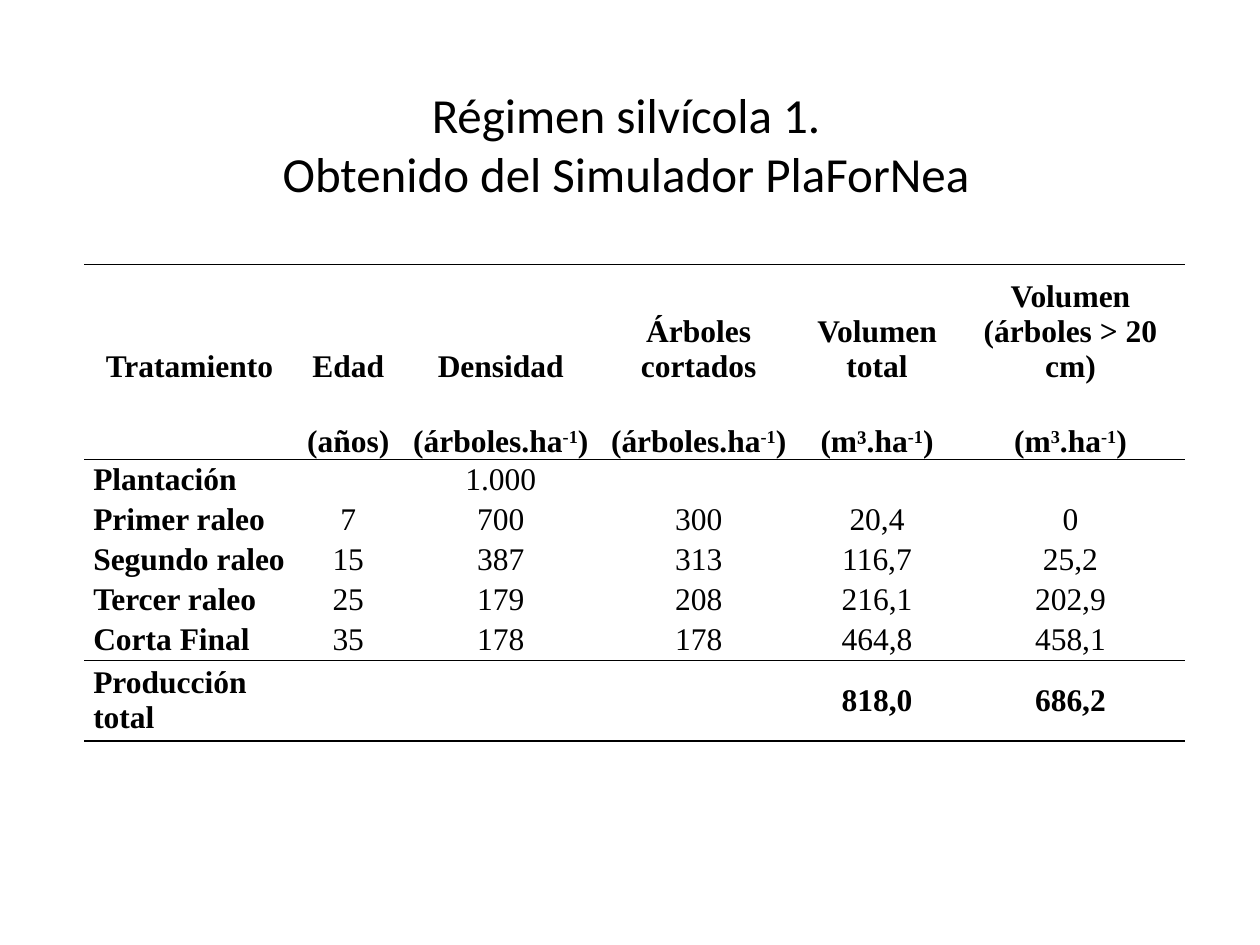
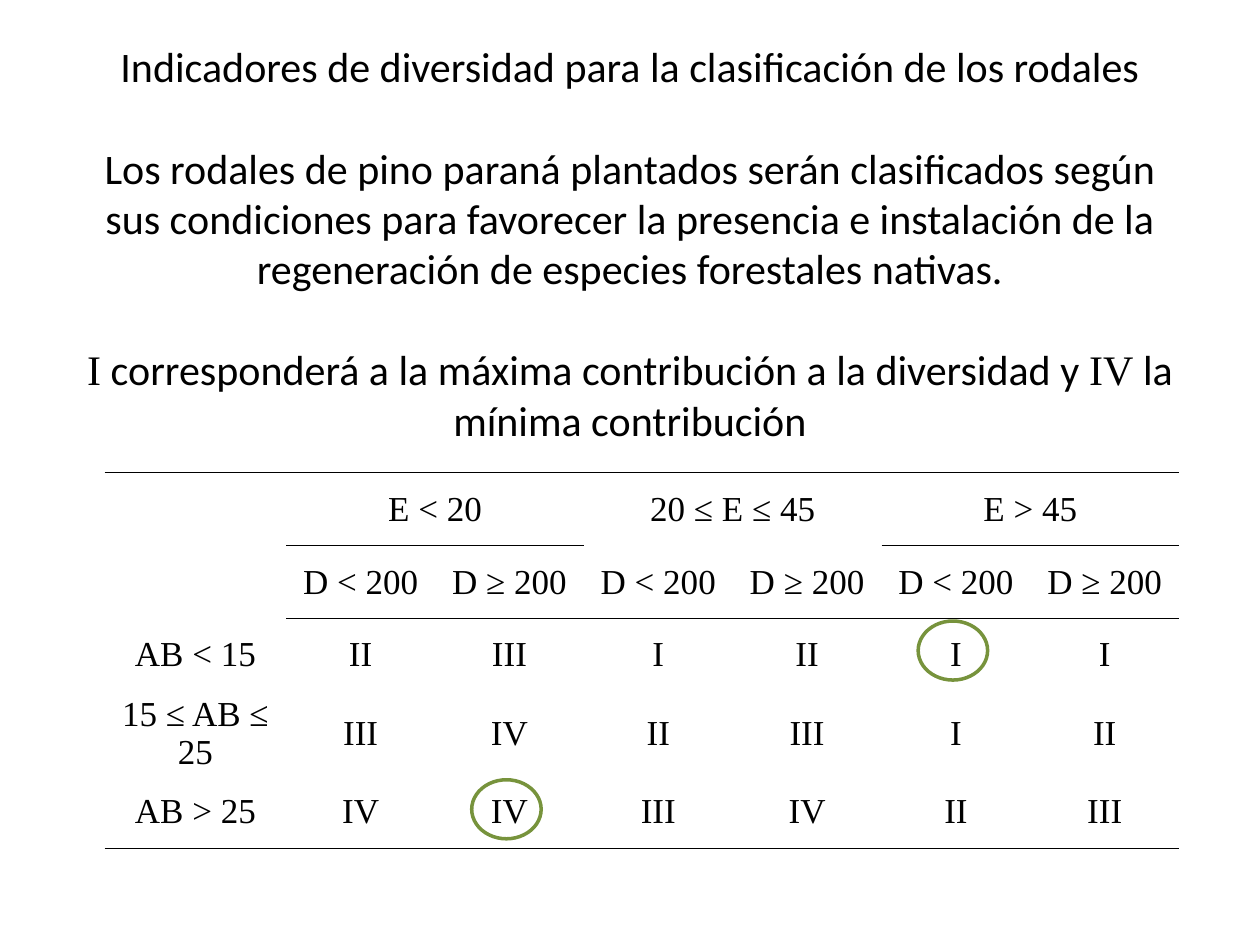
from dataclasses import dataclass
from itertools import accumulate

from lxml import etree
from pptx import Presentation
from pptx.dml.color import RGBColor
from pptx.enum.shapes import MSO_SHAPE
from pptx.enum.text import MSO_ANCHOR, PP_ALIGN
from pptx.oxml.ns import qn
from pptx.util import Cm, Pt

OVAL = MSO_SHAPE.OVAL
TOP, MID, LOW = MSO_ANCHOR.TOP, MSO_ANCHOR.MIDDLE, MSO_ANCHOR.BOTTOM
CENTER, JUST = PP_ALIGN.CENTER, PP_ALIGN.JUSTIFY


@dataclass(frozen=True)
class Theme:
    ink: str = "000000"
    paper: str = "FFFFFF"
    ring: str = "77933C"
    sans: str = "Calibri"
    serif: str = "Times New Roman"
    title: float = 28
    intro: float = 24
    yields: float = 18
    classes: float = 20
    rule: float = 1
    pad: float = 0.18


LOOK = Theme()

# Content: odd pieces between bars take the alternate run format
REGIME = ["Régimen silvícola 1.", "Obtenido del Simulador PlaForNea"]
YIELDS = [
    ["Tratamiento", "Edad", "Densidad", "Árboles cortados", "Volumen total",
     "Volumen\n(árboles > 20 cm)"],
    ["", "(años)", "(árboles.ha|-1|)", "(árboles.ha|-1|)", "(m³.ha|-1|)",
     "(m|3|.ha|-1|)"],
    ["Plantación", "", "1.000", "", "", ""],
    ["Primer raleo", "7", "700", "300", "20,4", "0"],
    ["Segundo raleo", "15", "387", "313", "116,7", "25,2"],
    ["Tercer raleo", "25", "179", "208", "216,1", "202,9"],
    ["Corta Final", "35", "178", "178", "464,8", "458,1"],
    ["Producción total", "", "", "", "818,0", "686,2"],
]
INTRO = [
    "Indicadores de diversidad para la clasificación de los rodales",
    "Los rodales de pino paraná plantados serán clasificados según sus "
    "condiciones para favorecer la presencia e instalación de la "
    "regeneración de especies forestales nativas.",
    "|I| corresponderá a la máxima contribución a la diversidad y |IV| "
    "la mínima contribución",
]
CLASSES = [
    ["", "E < 20", "", "20 ≤ E ≤ 45", "", "E > 45", ""],
    [""] + ["D < 200", "D ≥ 200"] * 3,
    ["AB < 15", "II", "III", "I", "II", "I", "I"],
    ["15 ≤ AB ≤ 25", "III", "IV", "II", "III", "I", "II"],
    ["AB > 25", "IV", "IV", "III", "IV", "II", "III"],
]


def text(frame, lines, size, font=LOOK.serif, bold=False, align=CENTER,
         gap=0, alt=None):
    """Write paragraphs; alt is the font of odd pieces, else superscript."""
    for num, line in enumerate(lines):
        para = frame.paragraphs[0] if num == 0 else frame.add_paragraph()
        para.alignment = align
        if num and gap:
            para.space_before = Pt(gap)
        for pos, piece in enumerate(line.split("|")):
            if not piece:
                continue
            run = para.add_run()
            run.text = piece
            run.font.size, run.font.bold = Pt(size), bold
            run.font.color.rgb = RGBColor.from_string(LOOK.ink)
            odd = pos % 2
            run.font.name = alt if odd and alt else font
            if odd and not alt:
                run.font._element.set("baseline", "30000")


def box(slide, left, top, wide, high, lines, anchor, **form):
    frame = slide.shapes.add_textbox(Cm(left), Cm(top), Cm(wide), Cm(high)).text_frame
    frame.word_wrap = True
    frame.vertical_anchor = anchor
    text(frame, lines, font=LOOK.sans, **form)


def border(cell, sides):
    """Rule the named sides and clear the others."""
    props = cell._tc.get_or_add_tcPr()
    for side in "LRTB":
        line = etree.SubElement(props, qn("a:ln" + side), w=str(Pt(LOOK.rule)))
        if side in sides:
            fill = etree.SubElement(line, qn("a:solidFill"))
            etree.SubElement(fill, qn("a:srgbClr"), val=LOOK.ink)
        else:
            etree.SubElement(line, qn("a:noFill"))


def grid(slide, left, top, cols, highs, data, rules, form):
    """Draw a table; rules holds (row edge, column), form gives cell format."""
    shape = slide.shapes.add_table(len(highs), len(cols), Cm(left), Cm(top),
                                   Cm(sum(cols)), Cm(sum(highs)))
    table = shape.table
    table.first_row = table.horz_banding = False
    for col, wide in zip(table.columns, cols):
        col.width = Cm(wide)
    for row, high in zip(table.rows, highs):
        row.height = Cm(high)
    for r, row in enumerate(data):
        for c, words in enumerate(row):
            cell = table.cell(r, c)
            border(cell, "T" * ((r, c) in rules) + "B" * ((r + 1, c) in rules))
            cell.fill.solid()
            cell.fill.fore_color.rgb = RGBColor.from_string(LOOK.paper)
            cell.margin_left = cell.margin_right = Cm(LOOK.pad)
            cell.margin_top = cell.margin_bottom = 0
            anchor, style = form(r, c)
            cell.vertical_anchor = anchor
            if words:
                text(cell.text_frame, words.split("\n"), **style)
    return table


def edges(*spans):
    return {(row, col) for row, cols in spans for col in cols}


def regime(slide):
    box(slide, 3.91, 1.6, 17.42, 2.6, REGIME, MID, size=LOOK.title)
    last = len(YIELDS) - 1

    def form(r, c):
        head = r < 2
        return LOW if head else MID, dict(
            size=LOOK.yields, bold=head or c == 0 or r == last,
            align=JUST if c == 0 and not head else CENTER)

    cols = [4.24, 2.16, 3.99, 3.99, 3.2, 4.6]
    highs = [2.41, 1.52] + [0.81] * 5 + [1.63]
    full = range(len(cols))
    rules = edges((0, full), (2, full), (last, full), (last + 1, full))
    grid(slide, 1.7, 5.33, cols, highs, YIELDS, rules, form)


def classes(slide):
    box(slide, 1.27, 0.7, 22.86, 8.6, INTRO, TOP, size=LOOK.intro,
        gap=29, alt=LOOK.serif)
    left, cols, highs = 2.11, [3.66] + [3] * 6, [1.47] * 5
    full = range(len(cols))
    rules = edges((0, full), (1, (1, 2, 5, 6)), (2, full[1:]), (5, full))
    table = grid(slide, left, 9.53, cols, highs, CLASSES, rules,
                 lambda r, c: (MID, dict(size=LOOK.classes)))
    for c in full[1::2]:
        table.cell(0, c).merge(table.cell(0, c + 1))

    # Rings around the chosen classes
    wide, high = 1.4, 1.19
    ends = list(accumulate(cols, initial=left))
    for c, top in ((2, 15.72), (5, 12.52)):
        mid = (ends[c] + ends[c + 1]) / 2 - 0.06
        ring = slide.shapes.add_shape(OVAL, Cm(mid - wide / 2), Cm(top),
                                      Cm(wide), Cm(high))
        ring.shadow.inherit = False
        ring.fill.background()
        ring.line.color.rgb = RGBColor.from_string(LOOK.ring)
        ring.line.width = Pt(2)


def main():
    deck = Presentation()
    deck.slide_width, deck.slide_height = Cm(25.4), Cm(19.05)
    for build in (regime, classes):
        build(deck.slides.add_slide(deck.slide_layouts[6]))
    deck.save("out.pptx")


if __name__ == "__main__":
    main()
